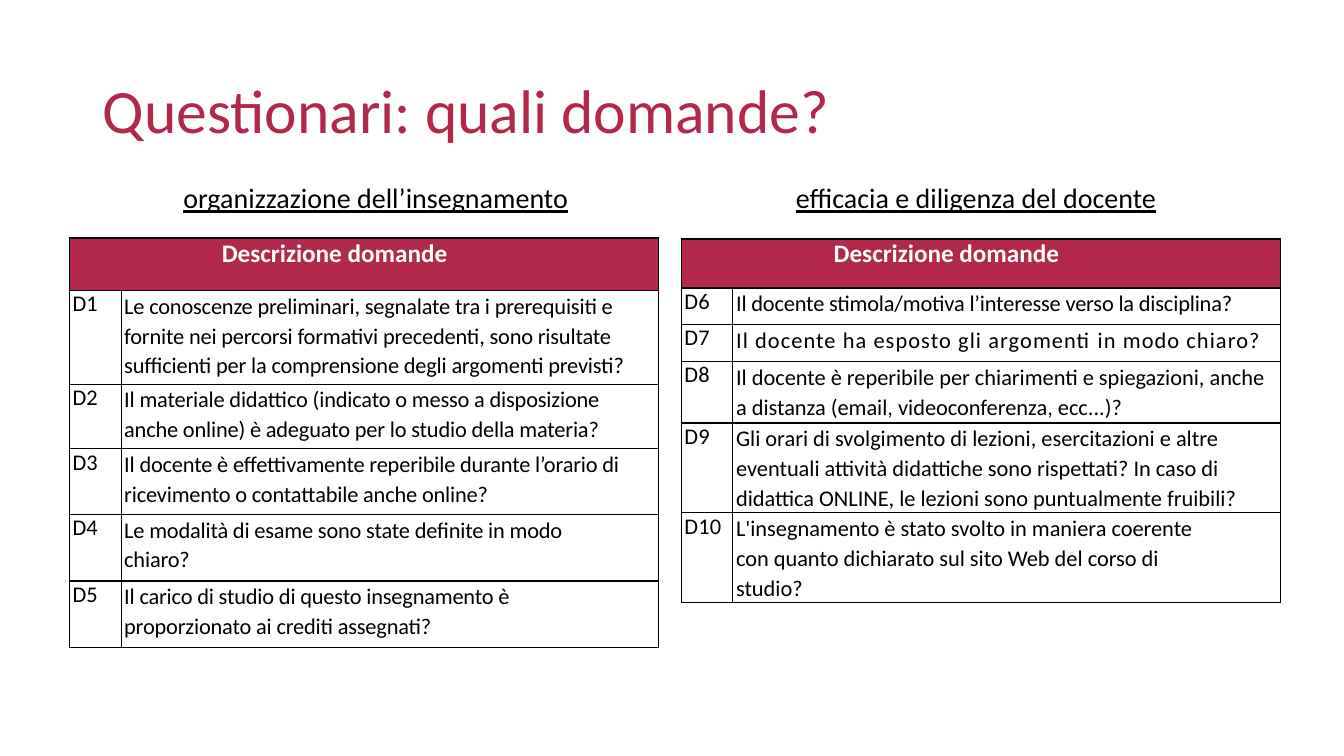
"""Build the slide listing the questionnaire's questions in two tables."""
from lxml import etree
from pptx import Presentation
from pptx import util as u
from pptx.dml.color import RGBColor
from pptx.enum import text
from pptx.oxml.ns import qn

HUES = {"red": "B2284B", "ink": "000000", "paper": "FFFFFF"}
TITLE = "Questionari: quali domande?"
HEADS = ("organizzazione dell’insegnamento", "efficacia e diligenza del docente")
BAND = "Descrizione domande"
LABEL = 1.3
TABLES = [
    {"left": 1.75, "top": 6.0, "wide": 13.54, "band": 1.32, "rows": [
        ("D1", "Le conoscenze preliminari, segnalate tra i prerequisiti e fornite nei percorsi "
         "formativi precedenti, sono risultate sufficienti per la comprensione degli "
         "argomenti previsti?", 2.36, -0.1, 0.25),
        ("D2", "Il materiale didattico (indicato o messo a disposizione anche online) è "
         "adeguato per lo studio della materia?", 1.63, -0.1, 0.25),
        ("D3", "Il docente è effettivamente reperibile durante l’orario di ricevimento o "
         "contattabile anche online?", 1.65, -0.1, 0.25),
        ("D4", "Le modalità di esame sono state definite in modo chiaro?", 1.68, -0.1, 0.8),
        ("D5", "Il carico di studio di questo insegnamento è proporzionato ai crediti "
         "assegnati?", 1.68, -0.1, 0.8),
    ]},
    {"left": 17.17, "top": 6.02, "wide": 13.79, "band": 1.24, "rows": [
        ("D6", "Il docente stimola/motiva l’interesse verso la disciplina?", 0.91, -0.1, 0.25),
        ("D7", "Il docente ha esposto gli argomenti in modo chiaro?", 0.94, 0.8, 0.25),
        ("D8", "Il docente è reperibile per chiarimenti e spiegazioni, anche a distanza "
         "(email, videoconferenza, ecc...)?", 1.55, 0, 0.25),
        ("D9", "Gli orari di svolgimento di lezioni, esercitazioni e altre eventuali attività "
         "didattiche sono rispettati? In caso di didattica ONLINE, le lezioni sono "
         "puntualmente fruibili?", 2.26, 0, 0.25),
        ("D10", "L'insegnamento è stato svolto in maniera coerente con quanto dichiarato sul "
         "sito Web del corso di studio?", 2.26, 0, 1.5),
    ]},
]


def put(obj, form):
    for key, val in form.items():
        setattr(obj, key, val)


def write(para, words, size, hue, space=0, **form):
    run = para.add_run()
    run.text = words
    put(run.font, {"name": "Calibri", "size": u.Pt(size), **form})
    run.font.color.rgb = RGBColor.from_string(HUES[hue])
    if space:
        run.font._element.set("spc", str(round(space * 100)))


def place(shape, left, top, width, height):
    put(shape, {"left": u.Cm(left), "top": u.Cm(top),
                "width": u.Cm(width), "height": u.Cm(height)})


def edge(cell, upper, lower):
    props = cell._tc.get_or_add_tcPr()
    widths = {"L": 0.85, "R": 0.85, "T": upper, "B": lower}
    for spot, (side, width) in enumerate(widths.items()):
        line = etree.Element(qn(f"a:ln{side}"), w=str(u.Pt(width)))
        fill = etree.SubElement(line, qn("a:solidFill"))
        etree.SubElement(fill, qn("a:srgbClr"), val=HUES["ink"])
        props.insert(spot, line)


def fill_cell(cell, words, size, hue, left=0.08, right=0, lead=None, space=0, bold=False):
    put(cell, dict.fromkeys(
        ("margin_left", "margin_right", "margin_top", "margin_bottom"), 0))
    para = cell.text_frame.paragraphs[0]
    props = para._p.get_or_add_pPr()
    props.set("marL", str(u.Cm(left)))
    props.set("marR", str(u.Cm(right)))
    props.set("indent", "0")
    if lead:
        para.line_spacing = lead
    write(para, words, size, hue, space, bold=bold)


def add_grid(slide, data):
    rows = data["rows"]
    highs = [data["band"]] + [row[2] for row in rows]
    wides = (LABEL, data["wide"])
    grid = slide.shapes.add_table(
        len(highs), 2, u.Cm(data["left"]), u.Cm(data["top"]),
        u.Cm(sum(wides)), u.Cm(sum(highs))).table
    put(grid, {"first_row": False, "horz_banding": False})
    for col, wide in zip(grid.columns, wides):
        col.width = u.Cm(wide)
    for row, high in zip(grid.rows, highs):
        row.height = u.Cm(high)
    grid.cell(0, 0).merge(grid.cell(0, 1))
    fill_cell(grid.cell(0, 0), BAND, 18, "paper", left=3.84, bold=True)
    for num, (code, words, high, space, right) in enumerate(rows, 1):
        fill_cell(grid.cell(num, 0), code, 16, "ink", space=0.1)
        fill_cell(grid.cell(num, 1), words, 16, "ink", right=right, lead=1.09, space=space)
    for num in range(len(highs)):
        for cell in grid.rows[num].cells:
            if num:
                cell.fill.background()
            else:
                cell.fill.solid()
                cell.fill.fore_color.rgb = RGBColor.from_string(HUES["red"])
            edge(cell, 1.07 if num == 1 else 1.04, 1.04 if num else 1.07)


def add_heads(slide):
    box = slide.shapes.add_textbox(0, 0, 0, 0)
    place(box, 4.37, 4.52, 25.76, 1.12)
    box.text_frame.word_wrap = True
    para = box.text_frame.paragraphs[0]
    tabs = etree.SubElement(para._p.get_or_add_pPr(), qn("a:tabLst"))
    etree.SubElement(tabs, qn("a:tab"), pos=str(u.Cm(15.44)), algn="l")
    para.line_spacing = 0.9
    for words, under in ((HEADS[0], True), ("\t", False), (HEADS[1], True)):
        write(para, words, 20, "ink", underline=under)


def main():
    deck = Presentation()
    put(deck, {"slide_width": u.Cm(33.87), "slide_height": u.Cm(19.05)})
    slide = deck.slides.add_slide(deck.slide_layouts[5])
    title = slide.shapes.title
    place(title, 2.34, 1.02, 29.21, 3.68)
    title.text_frame.vertical_anchor = text.MSO_ANCHOR.MIDDLE
    para = title.text_frame.paragraphs[0]
    put(para, {"alignment": text.PP_ALIGN.LEFT, "line_spacing": 0.9})
    write(para, TITLE, 44, "red")
    add_heads(slide)
    for data in TABLES:
        add_grid(slide, data)
    deck.save("out.pptx")


if __name__ == "__main__":
    main()
